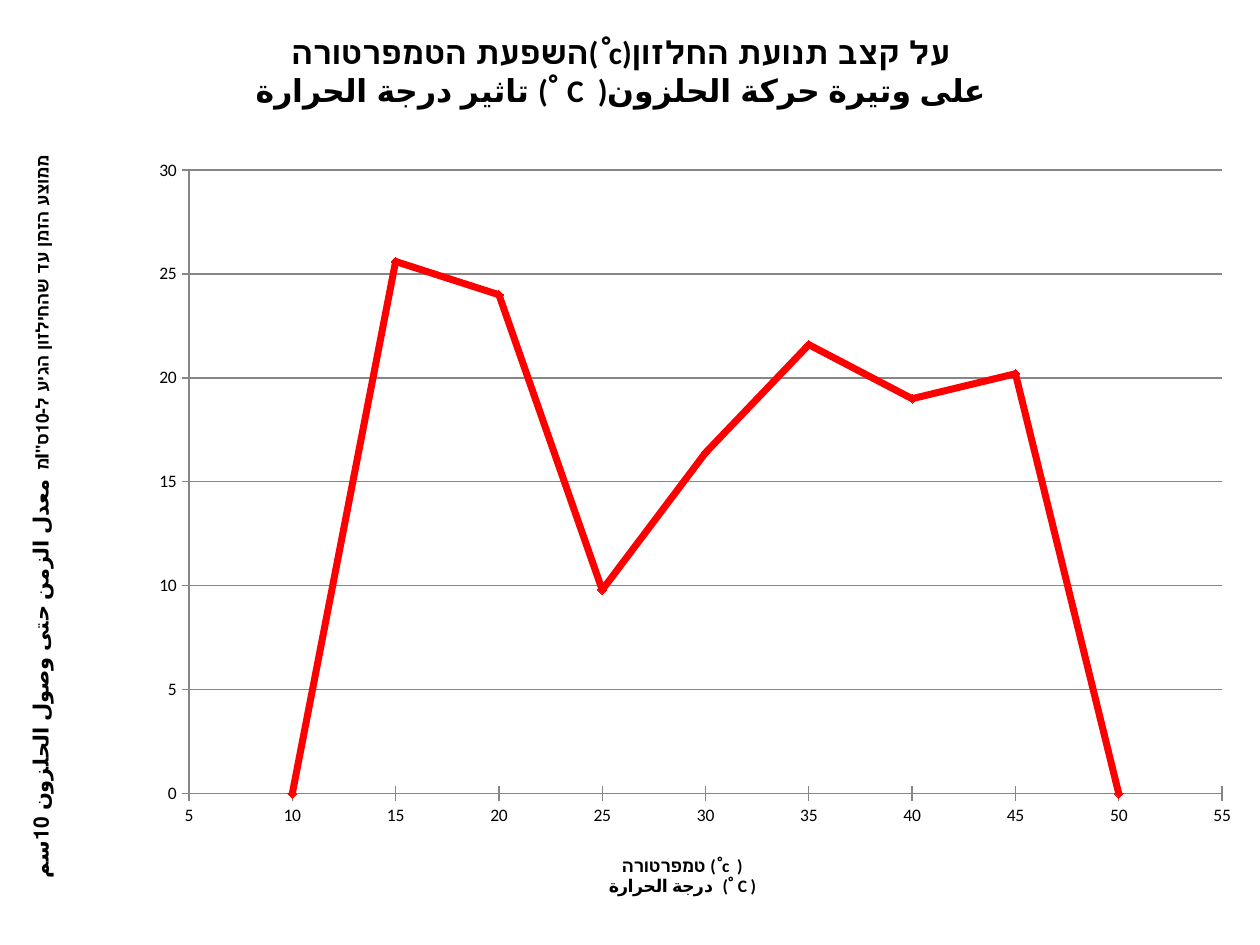
from pptx import Presentation
from pptx.chart.data import XyChartData
from pptx.dml.color import RGBColor
from pptx.enum.chart import XL_CHART_TYPE as Kind, XL_MARKER_STYLE as Mark, XL_TICK_MARK as Tick
from pptx.oxml import parse_xml
from pptx.oxml.ns import nsdecls, qn
from pptx.util import Inches, Pt

FONT = "Calibri"
TEMPS = range(10, 51, 5)
TIMES = [0, 25.6, 24, 9.8, 16.4, 21.6, 19, 20.2, 0]

# Each title is a list of lines, each line a list of (text, size) runs.
HEAD = [
    [("השפעת הטמפרטורה", 18), ("( ْc)", 18), ("על קצב תנועת החלזון", 18)],
    [("تاثير درجة الحرارة ", 18), ("( ْ C  )", 18), ("على وتيرة حركة الحلزون", 18)],
]
XNAME = [
    [("טמפרטורה ", 10), ("( ْc  )", 10)],
    [("درجة الحرارة  ", 10), ("( ْ C )", 10)],
]
YNAME = [[("ממוצע הזמן עד שהחילזון הגיע ל-10ס\"اמ  ", 10),
          ("معدل الزمن حتى وصول الحلزون 10سم", 12)]]

# Places as shares of the chart's size
PLOT = dict(x=0.15, y=0.18, w=0.82, h=0.66)
HEAD_AT = dict(x=0.2, y=0.03)
X_AT = dict(x=0.48, y=0.9)
Y_AT = dict(x=0.02, y=0.16)


def color(code):
    return RGBColor.from_string(code)


def place(node, spot, inner=False):
    """Give a chart part a manual layout."""
    for old in node.findall(qn("c:layout")):
        node.remove(old)
    rows = '<c:layoutTarget val="inner"/>' if inner else ""
    rows += "".join(f'<c:{k}Mode val="edge"/>' for k in "xy")
    rows += "".join(f'<c:{k} val="{v}"/>' for k, v in spot.items())
    box = parse_xml(f'<c:layout {nsdecls("c")}><c:manualLayout>{rows}'
                    '</c:manualLayout></c:layout>')
    text = node.find(qn("c:tx"))
    node.insert(0 if text is None else node.index(text) + 1, box)


def write(title, lines, spot):
    frame = title.text_frame
    for i, line in enumerate(lines):
        para = frame.add_paragraph() if i else frame.paragraphs[0]
        for text, size in line:
            run = para.add_run()
            run.text = text
            font = run.font
            font.name, font.size, font.bold = FONT, Pt(size), True
            font.color.rgb = color("000000")
    place(title._element, spot)


def scale(axis, low, high):
    axis.minimum_scale, axis.maximum_scale, axis.major_unit = low, high, 5
    axis.major_tick_mark, axis.minor_tick_mark = Tick.CROSS, Tick.NONE
    axis.tick_labels.number_format = "General"
    axis.tick_labels.number_format_is_linked = False
    ink(axis.format.line)


def ink(line):
    line.color.rgb = color("868686")
    line.width = Pt(0.75)


deck = Presentation()
deck.slide_width, deck.slide_height = Inches(10), Inches(7.5)
slide = deck.slides.add_slide(deck.slide_layouts[6])

data = XyChartData()
curve = data.add_series("Series 1")
for temp, time in zip(TEMPS, TIMES):
    curve.add_data_point(temp, time)
chart = slide.shapes.add_chart(Kind.XY_SCATTER_SMOOTH, 0, 0, deck.slide_width,
                               deck.slide_height, data).chart
chart.has_legend = False
chart.font.name, chart.font.size = FONT, Pt(10)
chart.font.color.rgb = color("000000")
place(chart._chartSpace.find(".//" + qn("c:plotArea")), PLOT, inner=True)

xaxis, yaxis = chart.category_axis, chart.value_axis
scale(xaxis, 5, 55)
scale(yaxis, 0, 30)
xaxis.has_major_gridlines = False
yaxis.has_major_gridlines = True
ink(yaxis.major_gridlines.format.line)

write(chart.chart_title, HEAD, HEAD_AT)
write(xaxis.axis_title, XNAME, X_AT)
write(yaxis.axis_title, YNAME, Y_AT)
body = yaxis.axis_title._element.find(".//" + qn("a:bodyPr"))
body.set("rot", "-5400000")
body.set("vert", "horz")

plot = chart.plots[0]
plot.vary_by_categories = False
line = plot.series[0]
line.smooth = True
line.format.line.color.rgb = color("FF0000")
line.format.line.width = Pt(4)
line.marker.style, line.marker.size = Mark.DIAMOND, 5
line.marker.format.fill.solid()
line.marker.format.fill.fore_color.rgb = color("FF0000")
line.marker.format.line.color.rgb = color("FF0000")

deck.save("out.pptx")
